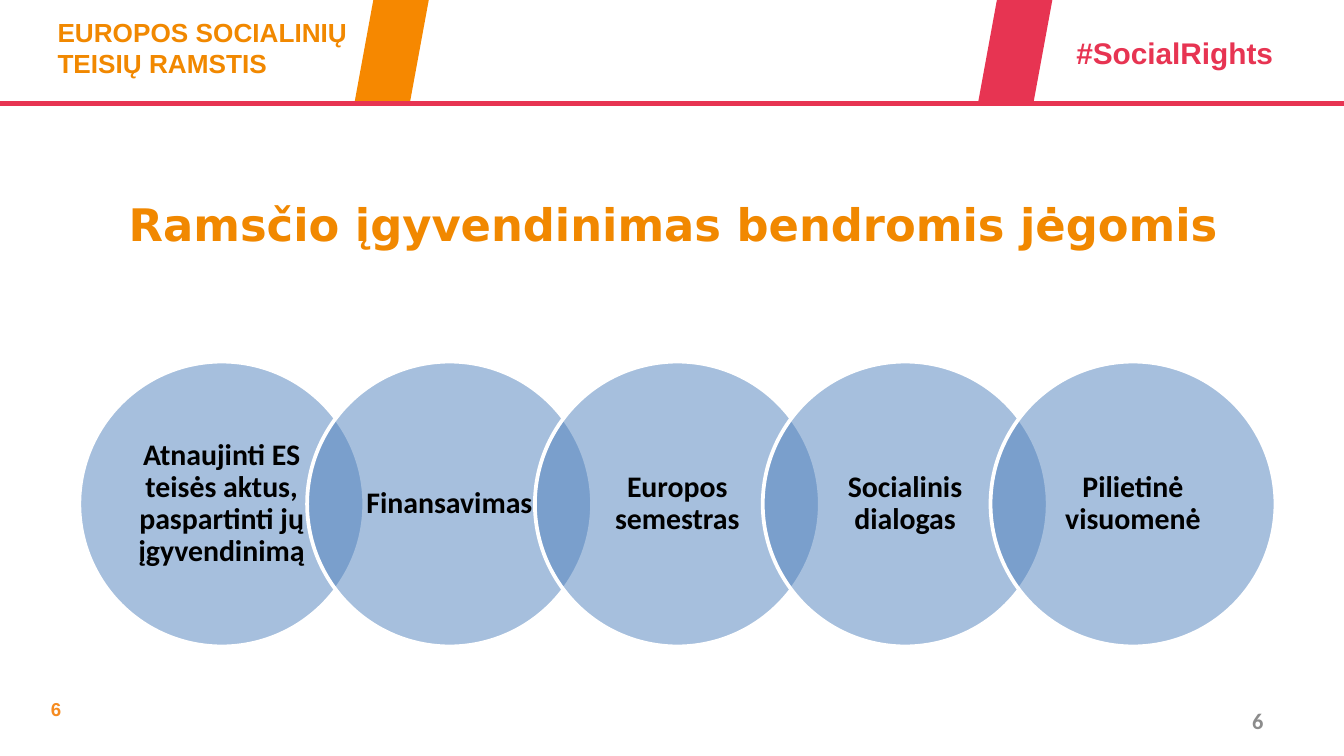
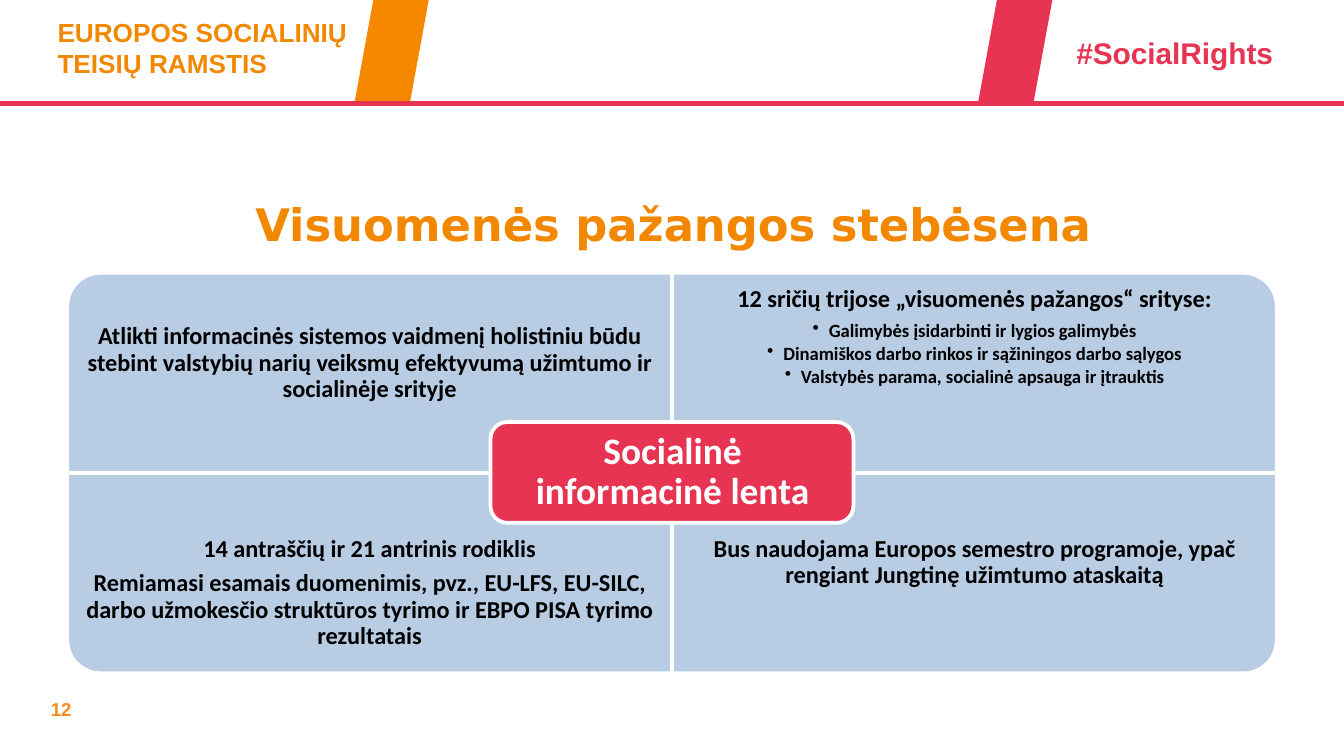
from lxml import etree
from pptx import Presentation
from pptx.dml.color import RGBColor
from pptx.enum.shapes import MSO_CONNECTOR as Connector, MSO_SHAPE as Shape
from pptx.enum.text import MSO_ANCHOR as Anchor, PP_ALIGN as Align
from pptx.oxml.ns import qn
from pptx.util import Inches, Pt

# Content
BANNER = "EUROPOS SOCIALINIŲ TEISIŲ RAMSTIS"
HASHTAG = "#SocialRights"

PILLAR_TITLE = "Ramsčio įgyvendinimas bendromis jėgomis"
PILLAR_STEPS = [
    "Atnaujinti ES teisės aktus, paspartinti jų įgyvendinimą",
    "Finansavimas",
    "Europos semestras",
    "Socialinis dialogas",
    "Pilietinė visuomenė",
]

PROGRESS_TITLE = "Visuomenės pažangos stebėsena"
PROGRESS_CENTRE = "Socialinė informacinė lenta"
# Row by row: paragraphs, bullets, panel rotation, top inset of the text
PROGRESS_PANELS = [
    (["Atlikti informacinės sistemos vaidmenį holistiniu būdu stebint "
      "valstybių narių veiksmų efektyvumą užimtumo ir socialinėje srityje"],
     [], 270, 0.38),
    (["12 sričių trijose „visuomenės pažangos“ srityse:"],
     ["Galimybės įsidarbinti ir lygios galimybės",
      "Dinamiškos darbo rinkos ir sąžiningos darbo sąlygos",
      "Valstybės parama, socialinė apsauga ir įtrauktis"], 0, 0.1),
    (["14 antraščių ir 21 antrinis rodiklis",
      "Remiamasi esamais duomenimis, pvz., EU-LFS, EU-SILC, darbo užmokesčio "
      "struktūros tyrimo ir EBPO PISA tyrimo rezultatais"], [], 180, 0.1),
    (["Bus naudojama Europos semestro programoje, ypač rengiant Jungtinę "
      "užimtumo ataskaitą"], [], 90, 0.1),
]

# Shared style
ORANGE, BAND_ORANGE, NUMBER_ORANGE = "F18800", "F68800", "F68B20"
RED, BLUE, PALE_BLUE = "E73452", "4F81BD", "B8CCE4"
BLACK, WHITE, GREY = "000000", "FFFFFF", "8C8C8C"


def colour(code):
    return RGBColor.from_string(code)


def add_paragraph(frame, text, first=False, size=13, font="Calibri", color=BLACK,
                  align=Align.CENTER, line=None, after=0, bullet=False):
    para = frame.paragraphs[0] if first else frame.add_paragraph()
    para.alignment = align
    para.space_after = Pt(after)
    if line:
        para.line_spacing = line
    if bullet:
        props = para._p.get_or_add_pPr()
        props.set("marL", str(Inches(0.12)))
        props.set("indent", str(-Inches(0.12)))
        etree.SubElement(props, qn("a:buChar")).set("char", "•")
    span = para.add_run()
    span.text = text
    span.font.size, span.font.name, span.font.bold = Pt(size), font, True
    span.font.color.rgb = colour(color)


def add_text(page, area, *texts, anchor=Anchor.TOP, insets=(0.1, 0.05, 0.1, 0.05), **style):
    box = page.shapes.add_textbox(*map(Inches, area))
    frame = box.text_frame
    frame.word_wrap = True
    frame.vertical_anchor = anchor
    (frame.margin_left, frame.margin_top,
     frame.margin_right, frame.margin_bottom) = map(Inches, insets)
    for index, text in enumerate(texts):
        add_paragraph(frame, text, first=index == 0, **style)
    return frame


def add_figure(page, kind, area, fill, outlined=True, alpha=None, rotation=0):
    left, top, width, height = area
    if rotation % 180:  # a quarter turn swaps the sides around the same centre
        left, top = left + (width - height) / 2, top + (height - width) / 2
        width, height = height, width
    figure = page.shapes.add_shape(kind, *map(Inches, (left, top, width, height)))
    figure.rotation = rotation
    figure.shadow.inherit = False
    figure.fill.solid()
    figure.fill.fore_color.rgb = colour(fill)
    if alpha:
        tint = figure.fill._xPr.find(qn("a:solidFill"))[0]
        etree.SubElement(tint, qn("a:alpha")).set("val", str(alpha * 1000))
    if outlined:
        figure.line.color.rgb = colour(WHITE)
        figure.line.width = Pt(2)
    else:
        figure.line.fill.background()


def add_page(deck, title, number):
    page = deck.slides.add_slide(deck.slide_layouts[6])
    # Header band and footer number
    add_text(page, (0.28, 5.14, 2.18, 0.27), number, size=10, font="Arial",
             color=NUMBER_ORANGE, align=Align.LEFT)
    add_text(page, (0.33, 0.07, 2.54, 0.57), BANNER, size=14, font="Arial",
             color=ORANGE, align=Align.LEFT)
    rule = page.shapes.add_connector(Connector.STRAIGHT, 0, Inches(0.77),
                                     deck.slide_width, Inches(0.77))
    rule.line.color.rgb = colour(RED)
    rule.line.width = Pt(2.25)
    etree.SubElement(rule._element.spPr, qn("a:effectLst"))
    add_text(page, (7.91, 0.21, 1.73, 0.37), HASHTAG, size=16, font="Arial",
             color=RED, align=Align.LEFT)
    for left, fill in ((2.64, BAND_ORANGE), (7.28, RED)):
        add_figure(page, Shape.PARALLELOGRAM, (left, 0, 0.55, 0.75), fill, outlined=False)
    # Title
    add_text(page, (0.51, 1.28, 9, 0.77), title, anchor=Anchor.MIDDLE, size=24,
             font="DejaVu Sans", color=ORANGE)
    return page


def build_pillar(deck):
    page = add_page(deck, PILLAR_TITLE, "6")
    add_text(page, (7.17, 5.21, 2.33, 0.3), "6", anchor=Anchor.MIDDLE, size=12,
             color=GREY, align=Align.RIGHT)
    # Chain of overlapping circles
    first, last, top, diameter, label = 0.59, 7.37, 2.69, 2.12, 1.5
    step = (last - first) / (len(PILLAR_STEPS) - 1)
    pad = (diameter - label) / 2
    for index, text in enumerate(PILLAR_STEPS):
        left = first + index * step
        add_figure(page, Shape.OVAL, (left, top, diameter, diameter), BLUE, alpha=50)
        add_text(page, (left + pad, top + pad, label, label), text, anchor=Anchor.MIDDLE,
                 insets=(0.12, 0.02, 0.12, 0.02), size=16, line=0.9)


def build_progress(deck):
    page = add_page(deck, PROGRESS_TITLE, "12")
    # Two by two panels, each with its outer corner rounded
    left, top, width, height, text_height = 0.5, 2.03, 4.5, 1.49, 1.12
    for index, (texts, bullets, rotation, inset) in enumerate(PROGRESS_PANELS):
        row, column = divmod(index, 2)
        x, y = left + column * width, top + row * height
        add_figure(page, Shape.ROUND_1_RECTANGLE, (x, y, width, height), PALE_BLUE,
                   rotation=rotation)
        text_top = y + row * (height - text_height)
        frame = add_text(page, (x, text_top, width, text_height), *texts,
                         insets=(0.1, inset, 0.1, 0.1), line=0.9, after=4.5)
        for bullet in bullets:
            add_paragraph(frame, bullet, size=10, line=0.9, after=1.5, bullet=True)
    # Centre label
    add_figure(page, Shape.ROUNDED_RECTANGLE, (3.65, 3.14, 2.7, 0.75), RED)
    add_text(page, (3.69, 3.18, 2.63, 0.67), PROGRESS_CENTRE, anchor=Anchor.MIDDLE,
             insets=(0.08, 0.08, 0.08, 0.08), size=20, color=WHITE, line=0.9)


def main():
    deck = Presentation()
    deck.slide_width = Inches(10)
    deck.slide_height = deck.slide_width * 9 // 16
    build_pillar(deck)
    build_progress(deck)
    deck.save("out.pptx")


if __name__ == "__main__":
    main()
